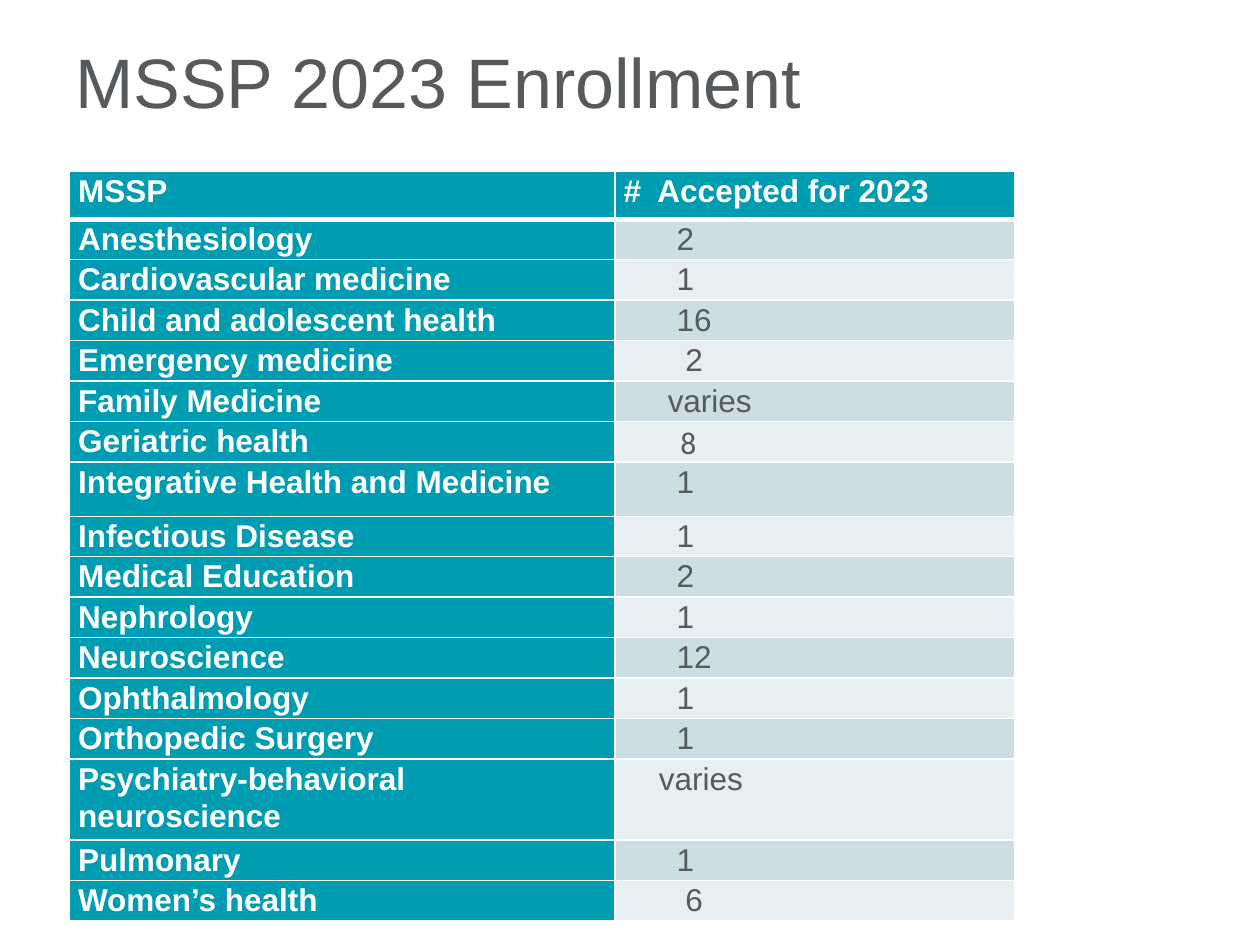
from typing import NamedTuple

from lxml.etree import SubElement
from pptx import Presentation
from pptx.dml.color import RGBColor as RGB
from pptx.enum.text import MSO_ANCHOR as Anchor
from pptx.oxml.ns import qn
from pptx.util import Inches, Pt

COLORS = {
    "white": "FFFFFF",
    "text": "565A5C",
    "teal": "009CB1",
    "band_dark": "CCDEE4",
    "band_light": "E7EFF2",
}


class Program(NamedTuple):
    name: str
    accepted: str
    indent: float = 0.42
    height: float = 0.29
    font: str = "Arial"


PROGRAMS = [
    Program("Anesthesiology", "2"),
    Program("Cardiovascular medicine", "1"),
    Program("Child and adolescent health", "16"),
    Program("Emergency medicine", "2", indent=0.49),
    Program("Family Medicine", "varies", indent=0.35),
    Program("Geriatric health", "8", indent=0.45, font="Calibri"),
    Program("Integrative Health and Medicine", "1", height=0.43),
    Program("Infectious Disease", "1"),
    Program("Medical Education", "2"),
    Program("Nephrology", "1"),
    Program("Neuroscience", "12"),
    Program("Ophthalmology", "1"),
    Program("Orthopedic Surgery", "1"),
    Program("Psychiatry-behavioral neuroscience", "varies", indent=0.28, height=0.6),
    Program("Pulmonary", "1"),
    Program("Women’s health", "6", indent=0.49),
]


def rgb(color: str) -> RGB:
    return RGB.from_string(COLORS[color])


def style_run(r, size: float, color: str, bold: bool = False, font: str = "Arial") -> None:
    r.font.name = font
    r.font.size = Pt(size)
    r.font.bold = bold
    r.font.color.rgb = rgb(color)


def set_borders(cell, top: float = 1, bottom: float = 1) -> None:
    """Draw white borders, with widths in points, ahead of the cell's fill."""
    tcPr = cell._tc.get_or_add_tcPr()
    for tag, width in (("lnL", 1), ("lnR", 1), ("lnT", top), ("lnB", bottom)):
        ln = SubElement(tcPr, qn(f"a:{tag}"), w=str(Pt(width)))
        SubElement(SubElement(ln, qn("a:solidFill")), qn("a:srgbClr"), val=COLORS["white"])


def fill_cell(cell, text: str, fill: str, color: str = "white", bold: bool = True,
              font: str = "Arial", indent: float = 0, top: float = 1, bottom: float = 1) -> None:
    set_borders(cell, top, bottom)
    cell.fill.solid()
    cell.fill.fore_color.rgb = rgb(fill)
    cell.margin_left = cell.margin_right = Inches(0.07)
    cell.margin_top = cell.margin_bottom = 0
    p = cell.text_frame.paragraphs[0]
    p.text = text
    p.line_spacing = 1.07
    if indent:
        p._p.get_or_add_pPr().set("marL", str(Inches(indent)))
    style_run(p.runs[0], 18, color, bold, font)


def add_title(slide, text: str) -> None:
    tf = slide.shapes.add_textbox(Inches(0.5), Inches(0.3), Inches(6.08), Inches(0.76)).text_frame
    tf.word_wrap = True
    tf.vertical_anchor = Anchor.MIDDLE
    p = tf.paragraphs[0]
    p.text = text
    p.line_spacing = 0.9
    style_run(p.runs[0], 40, "text")


def add_enrollment_table(slide) -> None:
    table = slide.shapes.add_table(len(PROGRAMS) + 1, 2, Inches(0.55), Inches(1.36),
                                   Inches(7.5), Inches(5.47)).table
    for column, width in zip(table.columns, (4.33, 3.17)):
        column.width = Inches(width)

    table.rows[0].height = Inches(0.38)
    for col, heading in enumerate(("MSSP", "#  Accepted for 2023")):
        fill_cell(table.cell(0, col), heading, "teal", bottom=3)

    for row, program in enumerate(PROGRAMS, start=1):
        table.rows[row].height = Inches(program.height)
        top = 3 if row == 1 else 1
        band = "band_dark" if row % 2 else "band_light"
        fill_cell(table.cell(row, 0), program.name, "teal", top=top)
        fill_cell(table.cell(row, 1), program.accepted, band, "text", bold=False,
                  font=program.font, indent=program.indent, top=top)


def main() -> None:
    prs = Presentation()
    prs.slide_width, prs.slide_height = Inches(10), Inches(7.5)
    slide = prs.slides.add_slide(prs.slide_layouts[6])
    add_title(slide, "MSSP 2023 Enrollment")
    add_enrollment_table(slide)
    prs.save("out.pptx")


if __name__ == "__main__":
    main()
